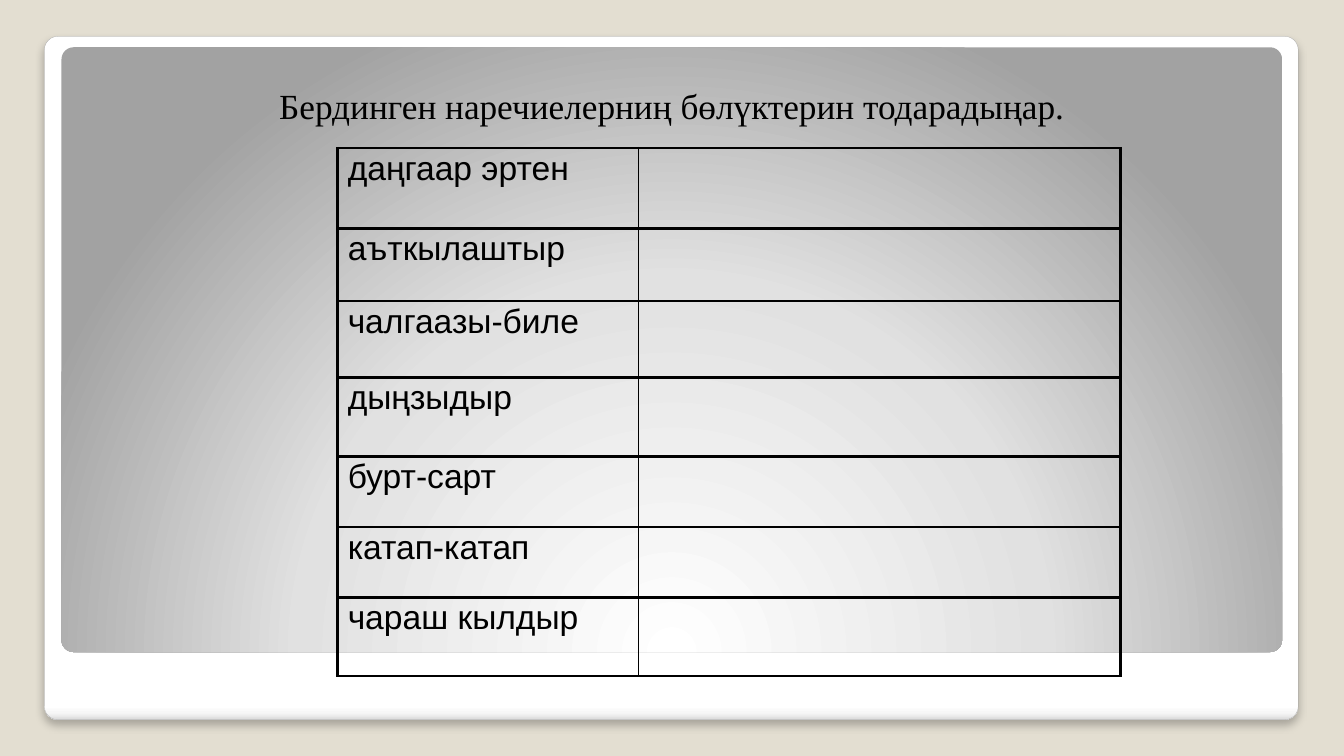
"""Build a slide with a two-column adverb exercise table on a framed panel."""
import dataclasses

import lxml.etree
import pptx
import pptx.dml.color
import pptx.enum.shapes
import pptx.enum.text
import pptx.util

Pt = pptx.util.Pt
NAMESPACE = "http://schemas.openxmlformats.org/drawingml/2006/main"


@dataclasses.dataclass
class Theme:
    background: str = "E3DED1"
    ink: str = "000000"
    frame_line: str = "A4A4A4"
    frame_stops: tuple = ((0, "FFFFFF"), (98, "FFFFFF"), (99, "F7F7F7"), (100, "DADADA"))
    panel_stops: tuple = ((0, "FFFFFF"), (55, "E1E1E1"), (100, "A2A2A2"))
    title_font: str = "Times New Roman"
    title_size: float = 25.2
    cell_font: str = "Arial"
    cell_size: float = 24


theme = Theme()


def element(tag, content, attributes=""):
    return lxml.etree.fromstring(f'<a:{tag} xmlns:a="{NAMESPACE}" {attributes}>{content}</a:{tag}>')


def add_text(para, text, font, size):
    span = para.add_run()
    span.text = text
    span.font.name = font
    span.font.size = Pt(size)
    span.font.color.rgb = pptx.dml.color.RGBColor.from_string(theme.ink)


deck = pptx.Presentation()
deck.slide_width, deck.slide_height = Pt(960), Pt(540)
slide = deck.slides.add_slide(deck.slide_layouts[6])
slide.background.fill.solid()
slide.background.fill.fore_color.rgb = pptx.dml.color.RGBColor.from_string(theme.background)

linear = '<a:lin ang="5400000" scaled="0"/>'
radial = '<a:path path="circle"><a:fillToRect l="50000" t="175000" r="50000" b="-75000"/></a:path>'
panels = (
    ((31.7, 25.9, 895.7, 488.2), theme.frame_stops, linear),
    ((43.9, 33.8, 871.9, 432), theme.panel_stops, radial),
)
cards = []
for bounds, stops, direction in panels:
    card = slide.shapes.add_shape(
        pptx.enum.shapes.MSO_SHAPE.ROUNDED_RECTANGLE, *map(Pt, bounds))
    card.adjustments[0] = 0.02
    card.shadow.inherit = False
    card.line.fill.background()
    stop_list = "".join(
        f'<a:gs pos="{position * 1000}"><a:srgbClr val="{color}"/></a:gs>' for position, color in stops)
    gradient = element("gradFill", f"<a:gsLst>{stop_list}</a:gsLst>{direction}", 'rotWithShape="1"')
    card.element.spPr.find(f"{{{NAMESPACE}}}prstGeom").addnext(gradient)
    cards.append(card)

frame = cards[0]
frame.line.color.rgb = pptx.dml.color.RGBColor.from_string(theme.frame_line)
frame.line.width = Pt(0.16)
frame.element.spPr.find(f"{{{NAMESPACE}}}effectLst").append(element(
    "outerShdw",
    f'<a:srgbClr val="{theme.ink}"><a:alpha val="25000"/></a:srgbClr>',
    f'blurRad="{Pt(6)}" dist="{Pt(4)}" dir="5400000" algn="t" rotWithShape="0"'))

title = slide.shapes.add_textbox(Pt(98), Pt(55.4), Pt(771), Pt(67.7))
box = title.text_frame
box.word_wrap = True
box.margin_top = Pt(5)
box.margin_right = Pt(14)
para = box.paragraphs[0]
para.alignment = pptx.enum.text.PP_ALIGN.CENTER
add_text(para, "Бердинген наречиелерниң бөлүктерин тодарадыңар.", theme.title_font, theme.title_size)

rows = (
    ("даңгаар эртен", 57.3),
    ("аъткылаштыр", 52),
    ("чалгаазы-биле", 54.8),
    ("дыңзыдыр", 56),
    ("бурт-сарт", 50.6),
    ("катап-катап", 50.2),
    ("чараш кылдыр", 56.2),
)
widths = (215, 344)
table = slide.shapes.add_table(
    len(rows), len(widths), Pt(241.2), Pt(105.8), Pt(sum(widths)),
    Pt(sum(height for _, height in rows))).table
table.first_row = False
table.horz_banding = False
for column, width in zip(table.columns, widths):
    column.width = Pt(width)

thick, thin = 2.25, 1
for row, (word, height) in zip(table.rows, rows):
    row.height = Pt(height)
    for cell, (left, right) in zip(row.cells, ((thick, thin), (thin, thick))):
        cell.fill.background()
        properties = cell._tc.get_or_add_tcPr()
        sides = (("lnL", left), ("lnR", right), ("lnT", thick), ("lnB", thick))
        for index, (side, weight) in enumerate(sides):
            properties.insert(index, element(
                side, f'<a:solidFill><a:srgbClr val="{theme.ink}"/></a:solidFill>', f'w="{Pt(weight)}"'))
    para = row.cells[0].text_frame.paragraphs[0]
    para.line_spacing = 0.9
    para.space_before = Pt(10)
    add_text(para, word, theme.cell_font, theme.cell_size)

deck.save("out.pptx")
